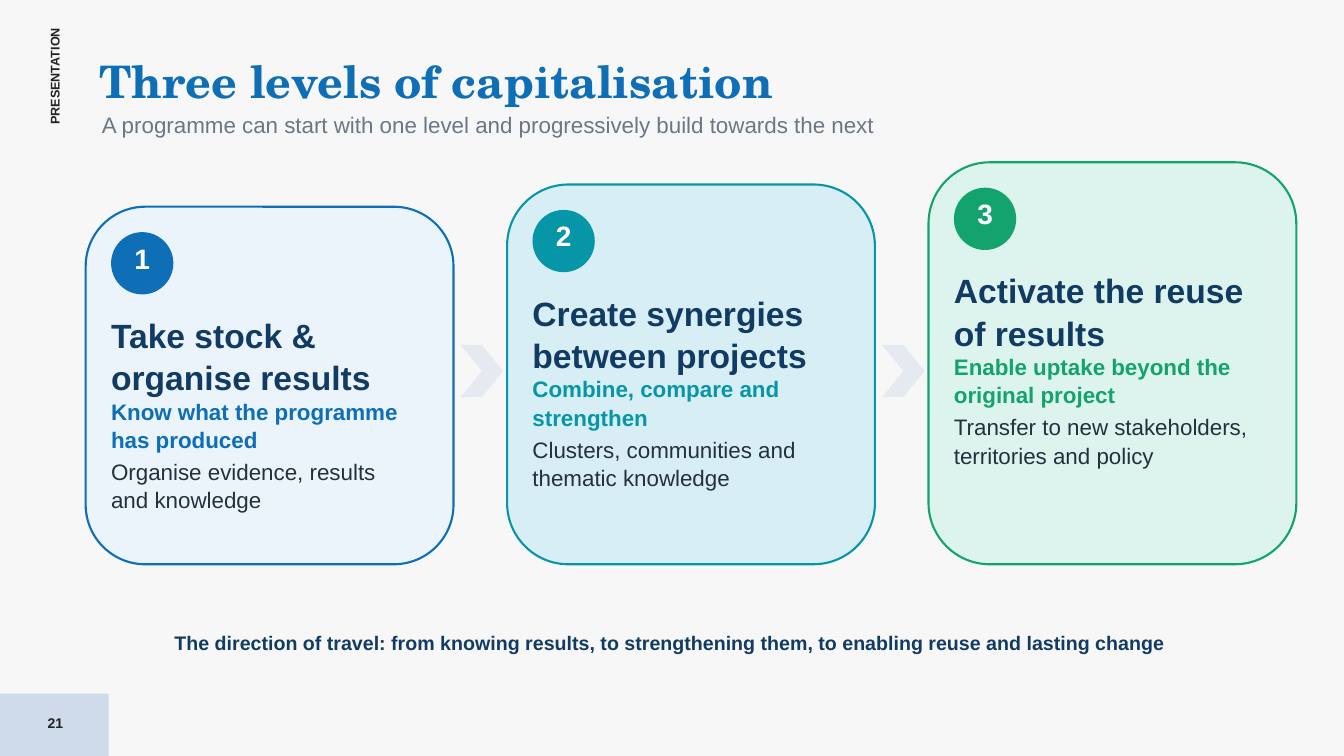
from pptx import Presentation
from pptx.dml.color import RGBColor
from pptx.enum.shapes import MSO_SHAPE
from pptx.enum.text import MSO_ANCHOR, MSO_AUTO_SIZE, PP_ALIGN
from pptx.util import Cm, Pt

PAPER = RGBColor(0xF7, 0xF7, 0xF7)
CORNER = RGBColor(0xCF, 0xDB, 0xEA)
BLACK = RGBColor(0x22, 0x22, 0x22)
NAVY = RGBColor(0x12, 0x3B, 0x63)
GREY = RGBColor(0x6B, 0x77, 0x85)
INK = RGBColor(0x24, 0x31, 0x3D)
WHITE = RGBColor(0xFF, 0xFF, 0xFF)
CHEVRON = RGBColor(0xE4, 0xEA, 0xF0)
BLUE = RGBColor(0x0E, 0x6E, 0xB6)
TEAL = RGBColor(0x07, 0x96, 0xA8)
GREEN = RGBColor(0x13, 0xA3, 0x6D)
PALE_BLUE = RGBColor(0xEA, 0xF4, 0xFA)
PALE_TEAL = RGBColor(0xD8, 0xEE, 0xF5)
PALE_GREEN = RGBColor(0xDD, 0xF4, 0xEE)

LEVELS = [
    (BLUE, PALE_BLUE, "Take stock & organise results",
     "Know what the programme has produced",
     "Organise evidence, results and knowledge"),
    (TEAL, PALE_TEAL, "Create synergies between projects",
     "Combine, compare and strengthen",
     "Clusters, communities and thematic knowledge"),
    (GREEN, PALE_GREEN, "Activate the reuse of results",
     "Enable uptake beyond the original project",
     "Transfer to new stakeholders, territories and policy"),
]
CARD_LEFT, CARD_TOP, CARD_BOTTOM, CARD_WIDTH = 2.16, 5.21, 14.22, 9.27
CARD_STEP, CARD_RISE, CARD_PADDING = 10.62, 0.56, 0.64


class LevelsPage:
    """Holds the text style and the slide, and adds each kind of element to it."""

    def __init__(self, deck):
        self.font = "Arial"
        self.title_font = "TeX Gyre Schola"
        self.line_spacing = 1.05
        self.page = deck.slides.add_slide(deck.slide_layouts[5])
        self.page.background.fill.solid()
        self.page.background.fill.fore_color.rgb = PAPER

    def set_text(self, box, text, size, color, bold, align, anchor, font, spacing):
        frame = box.text_frame
        frame.text = text
        frame.word_wrap = True
        frame.auto_size = MSO_AUTO_SIZE.NONE
        frame.vertical_anchor = anchor
        frame.margin_left = frame.margin_right = Cm(0)
        frame.margin_top = frame.margin_bottom = Cm(0)
        para = frame.paragraphs[0]
        para.alignment = align
        para.line_spacing = spacing
        para.font.name = font
        para.font.size = Pt(size)
        para.font.bold = bold
        para.font.color.rgb = color

    def title(self, text, left, top, width, height):
        box = self.page.shapes.title
        box.left, box.top = Cm(left), Cm(top)
        box.width, box.height = Cm(width), Cm(height)
        self.set_text(box, text, 32, BLUE, True, PP_ALIGN.LEFT, MSO_ANCHOR.TOP,
                      self.title_font, 1.0)

    def text(self, text, left, top, width, height, size, color, bold=True,
             align=PP_ALIGN.LEFT, anchor=MSO_ANCHOR.TOP):
        box = self.page.shapes.add_textbox(
            Cm(left), Cm(top), Cm(width), Cm(height))
        self.set_text(box, text, size, color, bold, align, anchor, self.font,
                      self.line_spacing)
        return box

    def shape(self, kind, left, top, width, height, fill, outline=None):
        shape = self.page.shapes.add_shape(
            kind, Cm(left), Cm(top), Cm(width), Cm(height))
        shape.shadow.inherit = False
        shape.fill.solid()
        shape.fill.fore_color.rgb = fill
        if outline is None:
            shape.line.fill.background()
        else:
            shape.line.color.rgb = outline
            shape.line.width = Pt(1.5)

    def card(self, index, accent, fill, heading, aim, detail):
        left = CARD_LEFT + index * CARD_STEP
        top = CARD_TOP - index * CARD_RISE
        inner = left + CARD_PADDING
        self.shape(MSO_SHAPE.ROUNDED_RECTANGLE, left, top, CARD_WIDTH,
                   CARD_BOTTOM - top, fill, accent)
        self.shape(MSO_SHAPE.OVAL, inner, top + CARD_PADDING, 1.57, 1.57, accent)
        self.text(str(index + 1), inner, top + 0.84, 1.57, 0.86, 20, WHITE,
                  align=PP_ALIGN.CENTER, anchor=MSO_ANCHOR.MIDDLE)
        self.text(heading, inner, top + 2.67, 7.87, 2.06, 24, NAVY)
        self.text(aim, inner, top + 4.78, 7.62, 1.37, 16, accent)
        self.text(detail, inner, top + 6.3, 7.62, 1.37, 16, INK, bold=False)

    def chevron(self, index):
        self.shape(MSO_SHAPE.CHEVRON, 11.61 + index * CARD_STEP, 8.69,
                   1.07, 1.32, CHEVRON)


def main():
    deck = Presentation()
    deck.slide_width, deck.slide_height = Cm(33.87), Cm(19.05)
    levels = LevelsPage(deck)
    levels.shape(MSO_SHAPE.RECTANGLE, 0, 17.48, 2.74, 1.57, CORNER)
    label = levels.text("PRESENTATION", 0.1, 1.7, 2.51, 0.38, 9, BLACK)
    label.text_frame.word_wrap = False
    label.rotation = 270
    levels.text("21", 0, 17.7, 2.79, 1.02, 10, BLACK,
                align=PP_ALIGN.CENTER, anchor=MSO_ANCHOR.MIDDLE)
    levels.title("Three levels of capitalisation", 2.51, 1.35, 29.72, 1.37)
    levels.text("A programme can start with one level and progressively build "
                "towards the next", 2.57, 2.77, 29.21, 0.69, 16, GREY, bold=False)
    for index, level in enumerate(LEVELS):
        if index:
            levels.chevron(index - 1)
        levels.card(index, *level)
    levels.text("The direction of travel: from knowing results, to strengthening "
                "them, to enabling reuse and lasting change",
                2.92, 15.88, 27.94, 0.61, 14, NAVY, align=PP_ALIGN.CENTER)
    deck.save("out.pptx")


if __name__ == "__main__":
    main()
